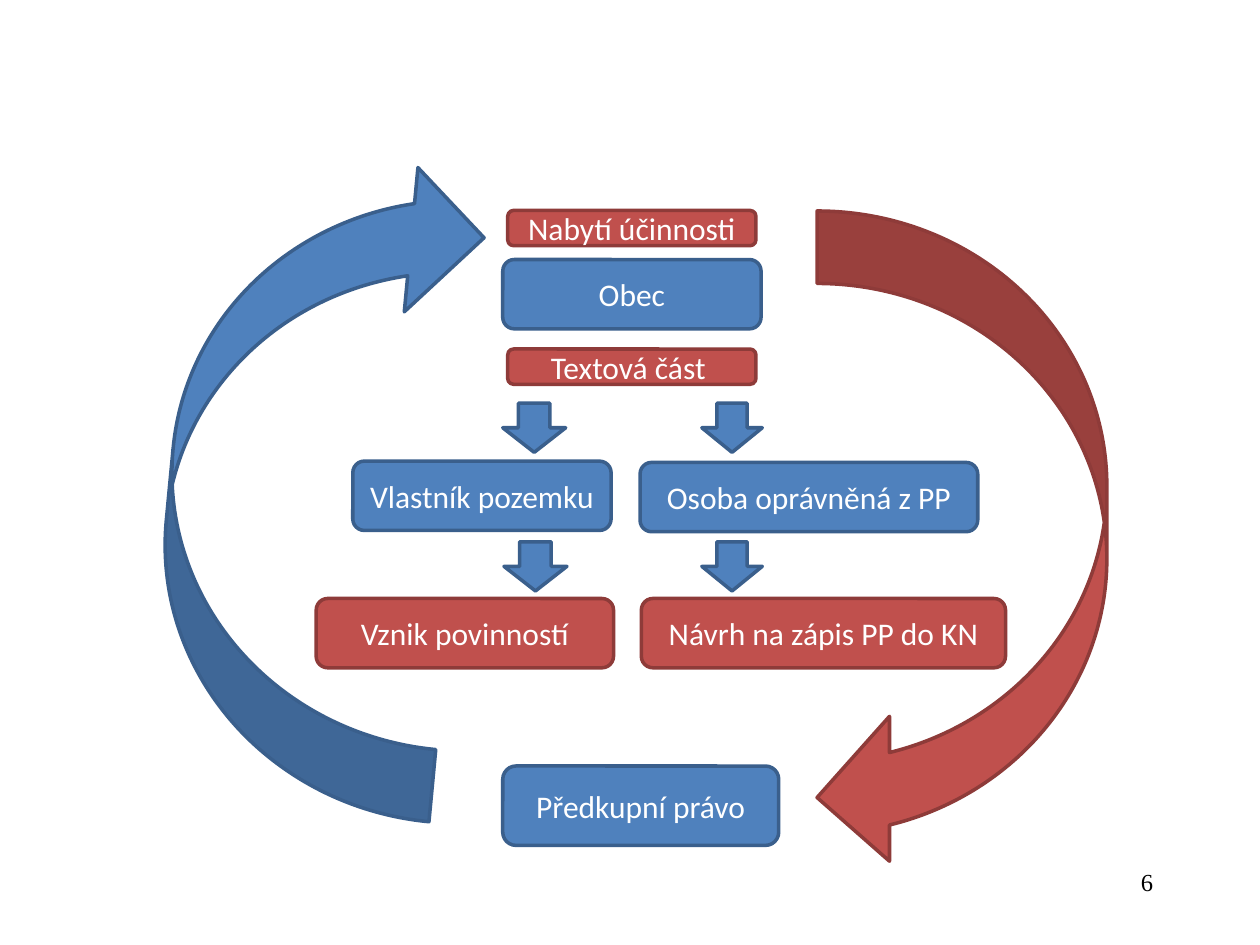
"""Build the slide showing the cycle of the pre-emption right."""
from dataclasses import dataclass

from pptx import Presentation
from pptx.dml.color import RGBColor
from pptx.enum.shapes import MSO_SHAPE as Preset
from pptx.enum.text import MSO_ANCHOR as Anchor, PP_ALIGN as Align
from pptx.shapes.autoshape import Shape
from pptx.slide import Slide
from pptx.text.text import TextFrame
from pptx.util import Inches, Length, Pt

COLUMNS, ROWS = 100, 75
CELL = 0.1
COLORS = {
    "blue": "4F81BD", "blue_edge": "3A5F8C",
    "red": "C0504D", "red_edge": "8E3B39",
    "white": "FFFFFF", "black": "000000",
}


@dataclass(frozen=True)
class Area:
    column: float
    row: float
    columns: float
    rows: float

    def lengths(self) -> list[Length]:
        return [Inches(cells * CELL)
                for cells in (self.column, self.row, self.columns, self.rows)]


@dataclass(frozen=True)
class Step:
    label: str
    area: Area
    tone: str


@dataclass(frozen=True)
class Sweep:
    area: Area
    tone: str
    rotation: float


STEPS = [
    Step("Nabytí účinnosti", Area(40.3, 16.7, 19.7, 2.8), "red"),
    Step("Obec", Area(39.9, 20.6, 20.5, 5.5), "blue"),
    Step("Textová část ", Area(40.3, 27.7, 19.7, 2.8), "red"),
    Step("Vlastník pozemku", Area(28, 36.6, 20.5, 5.5), "blue"),
    Step("Osoba oprávněná z PP", Area(50.8, 36.7, 26.8, 5.5), "blue"),
    Step("Vznik povinností", Area(25.1, 47.5, 23.6, 5.5), "red"),
    Step("Návrh na zápis PP do KN", Area(50.9, 47.5, 28.9, 5.5), "red"),
    Step("Předkupní právo", Area(39.9, 60.8, 21.9, 6.3), "blue"),
]
DESCENTS = [
    Area(column, row, columns, 3.9)
    for row, left in ((32, 39.9), (43, 40))
    for column, columns in ((left, 5), (55.7, 4.8))
]
SWEEPS = [
    Sweep(Area(-1.1, 26.6, 52.3, 23), "blue", 275.4),
    Sweep(Area(50.2, 31.4, 52.3, 23), "red", 90),
]


def color(name: str) -> RGBColor:
    return RGBColor.from_string(COLORS[name])


def write(frame: TextFrame, text: str, font: str, size: int, tone: str,
          align: Align, anchor: Anchor) -> None:
    frame.text = text
    frame.word_wrap = True
    frame.vertical_anchor = anchor
    line = frame.paragraphs[0]
    line.alignment = align
    line.font.name = font
    line.font.size = Pt(size)
    line.font.color.rgb = color(tone)


def draw(slide: Slide, preset: Preset, area: Area, tone: str) -> Shape:
    figure = slide.shapes.add_shape(preset, *area.lengths())
    figure.shadow.inherit = False
    figure.fill.solid()
    figure.fill.fore_color.rgb = color(tone)
    figure.line.color.rgb = color(f"{tone}_edge")
    figure.line.width = Pt(2)
    return figure


def draw_step(slide: Slide, step: Step) -> None:
    box = draw(slide, Preset.ROUNDED_RECTANGLE, step.area, step.tone)
    write(box.text_frame, step.label, "Calibri", 18, "white",
          Align.CENTER, Anchor.MIDDLE)


def draw_sweep(slide: Slide, sweep: Sweep) -> None:
    arrow = draw(slide, Preset.CURVED_UP_ARROW, sweep.area, sweep.tone)
    arrow.rotation = sweep.rotation
    arrow.element.spPr.xfrm.set("flipV", "1")


def main() -> None:
    deck = Presentation()
    deck.slide_width = Inches(COLUMNS * CELL)
    deck.slide_height = Inches(ROWS * CELL)
    slide = deck.slides.add_slide(deck.slide_layouts[6])

    page_number = slide.shapes.add_textbox(*Area(71.7, 68.3, 20.8, 5).lengths())
    write(page_number.text_frame, "6", "Times New Roman", 14, "black",
          Align.RIGHT, Anchor.TOP)
    for sweep in SWEEPS:
        draw_sweep(slide, sweep)
    for step in STEPS:
        draw_step(slide, step)
    for descent in DESCENTS:
        draw(slide, Preset.DOWN_ARROW, descent, "blue")
    deck.save("out.pptx")


if __name__ == "__main__":
    main()
